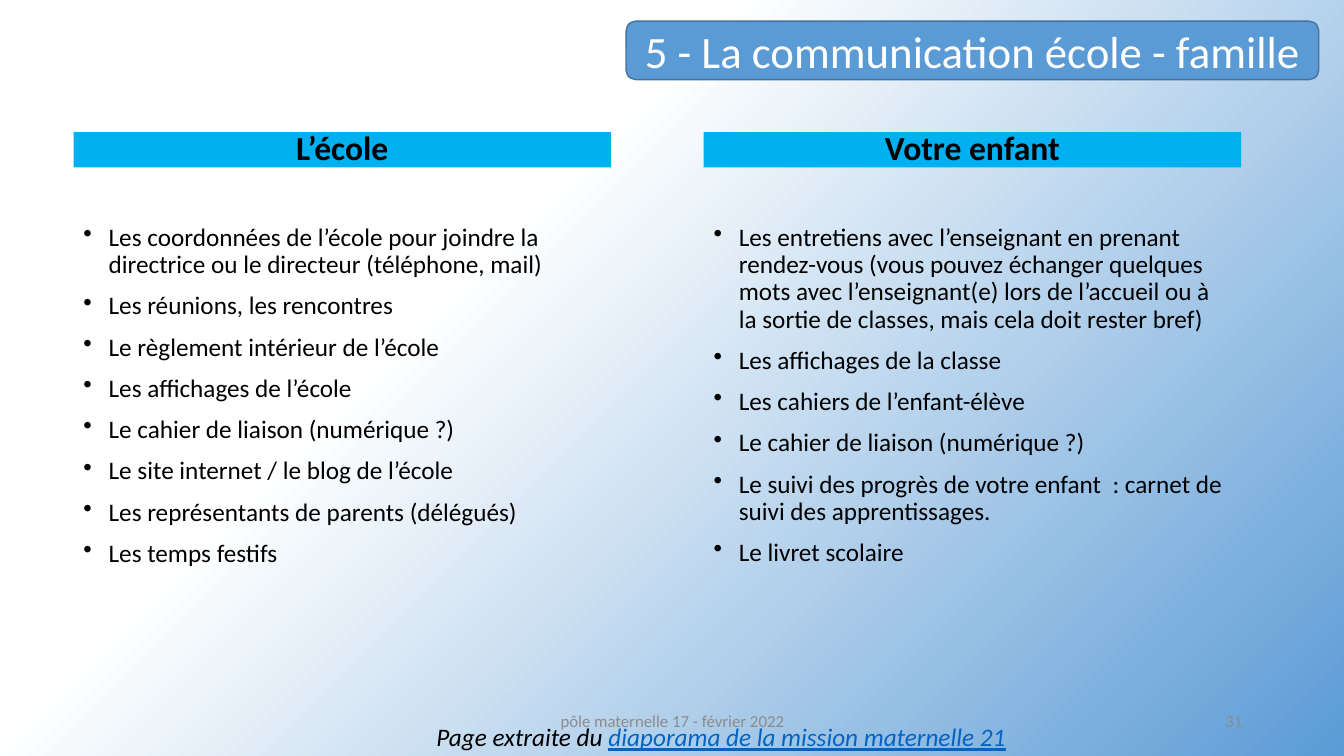
"""Build the slide on communication between school and family."""
from copy import deepcopy

from pptx import Presentation
from pptx.dml.color import RGBColor
from pptx.enum.shapes import MSO_SHAPE as SHAPE
from pptx.enum.text import MSO_ANCHOR as ANCHOR, PP_ALIGN as ALIGN
from pptx.oxml.ns import qn
from pptx.util import Inches, Pt

WHITE = RGBColor(0xFF, 0xFF, 0xFF)
BLACK = RGBColor(0, 0, 0)
BLUE = RGBColor(0x5B, 0x9B, 0xD5)
DARK_BLUE = RGBColor(0x43, 0x73, 0x9E)
CYAN = RGBColor(0x00, 0xB0, 0xF0)
LINK_BLUE = RGBColor(0x05, 0x63, 0xC1)
GREY = RGBColor(0x8C, 0x8C, 0x8C)

COLUMNS = [
    (0.73, "L’école", [
        "Les coordonnées de l’école pour joindre la directrice ou le directeur (téléphone, mail)",
        "Les réunions, les rencontres",
        "Le règlement intérieur de l’école",
        "Les affichages de l’école",
        "Le cahier de liaison (numérique ?)",
        "Le site internet / le blog de l’école",
        "Les représentants de parents (délégués)",
        "Les temps festifs",
    ]),
    (6.98, "Votre enfant", [
        "Les entretiens avec l’enseignant en prenant rendez-vous (vous pouvez échanger "
        "quelques mots avec l’enseignant(e) lors de l’accueil ou à la sortie de classes, "
        "mais cela doit rester bref)",
        "Les affichages de la classe",
        "Les cahiers de l’enfant-élève",
        "Le cahier de liaison (numérique ?)",
        "Le suivi des progrès de votre enfant  : carnet de suivi des apprentissages.",
        "Le livret scolaire",
    ]),
]


def add_box(at, shape=None, fill=None, anchor=ANCHOR.MIDDLE):
    box = [Inches(v) for v in at]
    if shape is None:
        sp = s.shapes.add_textbox(*box)
    else:
        sp = s.shapes.add_shape(shape, *box)
        sp.shadow.inherit = False
        sp.fill.solid()
        sp.fill.fore_color.rgb = fill
        sp.line.fill.background()
    sp.text_frame.word_wrap = True
    sp.text_frame.vertical_anchor = anchor
    return sp


def add_run(p, text, size, color, **style):
    r = p.add_run()
    r.text = text
    r.font.color.rgb = color
    for name, value in {"name": "Calibri", "size": Pt(size), **style}.items():
        setattr(r.font, name, value)


prs = Presentation()
prs.slide_width, prs.slide_height = Inches(13.33), Inches(7.5)
s = prs.slides.add_slide(prs.slide_layouts[6])

bg = s.background.fill
bg.gradient()
bg.gradient_angle = 315
stops = s.background.fill.gradient_stops
gs_list = s.element.find(".//" + qn("a:gsLst"))
gs_list.append(deepcopy(gs_list[-1]))
for stop, (position, color) in zip(bg.gradient_stops, [(0, WHITE), (0.35, WHITE), (1, BLUE)]):
    stop.position = position
    stop.color.rgb = color

for left, heading, items in COLUMNS:
    tf = add_box((left, 2.18, 5.33, 4.02), anchor=ANCHOR.TOP).text_frame
    for i, item in enumerate(items):
        p = tf.paragraphs[0] if i == 0 else tf.add_paragraph()
        pPr = p._p.get_or_add_pPr()
        pPr.set("marL", str(Inches(0.25)))
        pPr.set("indent", str(-Inches(0.25)))
        bullet = pPr.makeelement(qn("a:buChar"), {"char": "•"})
        pPr.append(bullet)
        p.line_spacing = 0.9
        p.space_before = Pt(10 if i else 0)
        add_run(p, item, 18, BLACK)

    tf = add_box((left, 1.31, 5.33, 0.35), SHAPE.RECTANGLE, CYAN).text_frame
    tf.margin_top = tf.margin_bottom = 0
    p = tf.paragraphs[0]
    p.alignment, p.line_spacing = ALIGN.CENTER, 0.9
    add_run(p, heading, 24, BLACK, bold=True)

title = add_box((6.21, 0.21, 6.87, 0.58), SHAPE.ROUNDED_RECTANGLE, BLUE)
title.line.color.rgb = DARK_BLUE
title.line.width = Pt(1)
p = title.text_frame.paragraphs[0]
p.alignment = ALIGN.CENTER
add_run(p, "5 - La communication école - famille", 32, WHITE)

p = add_box((4.23, 7.11, 6.15, 0.4), anchor=ANCHOR.TOP).text_frame.paragraphs[0]
add_run(p, "Page extraite du ", 18, BLACK, italic=True)
add_run(p, "diaporama de la mission maternelle 21", 18, LINK_BLUE, italic=True, underline=True)

for left, width, align, text in [
    (4.42, 4.5, ALIGN.CENTER, "pôle maternelle 17 - février 2022"),
    (9.42, 3, ALIGN.RIGHT, "31"),
]:
    p = add_box((left, 6.95, width, 0.4)).text_frame.paragraphs[0]
    p.alignment = align
    add_run(p, text, 12, GREY)

prs.save("out.pptx")
